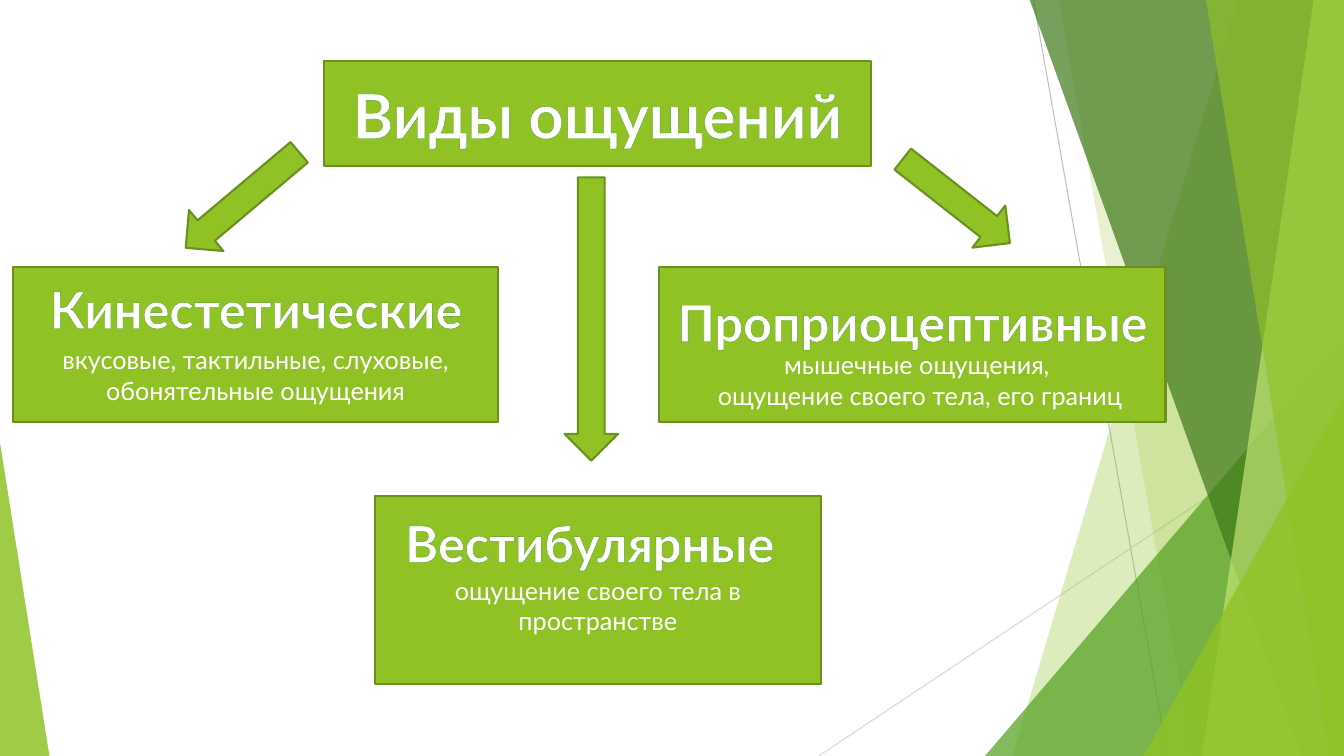
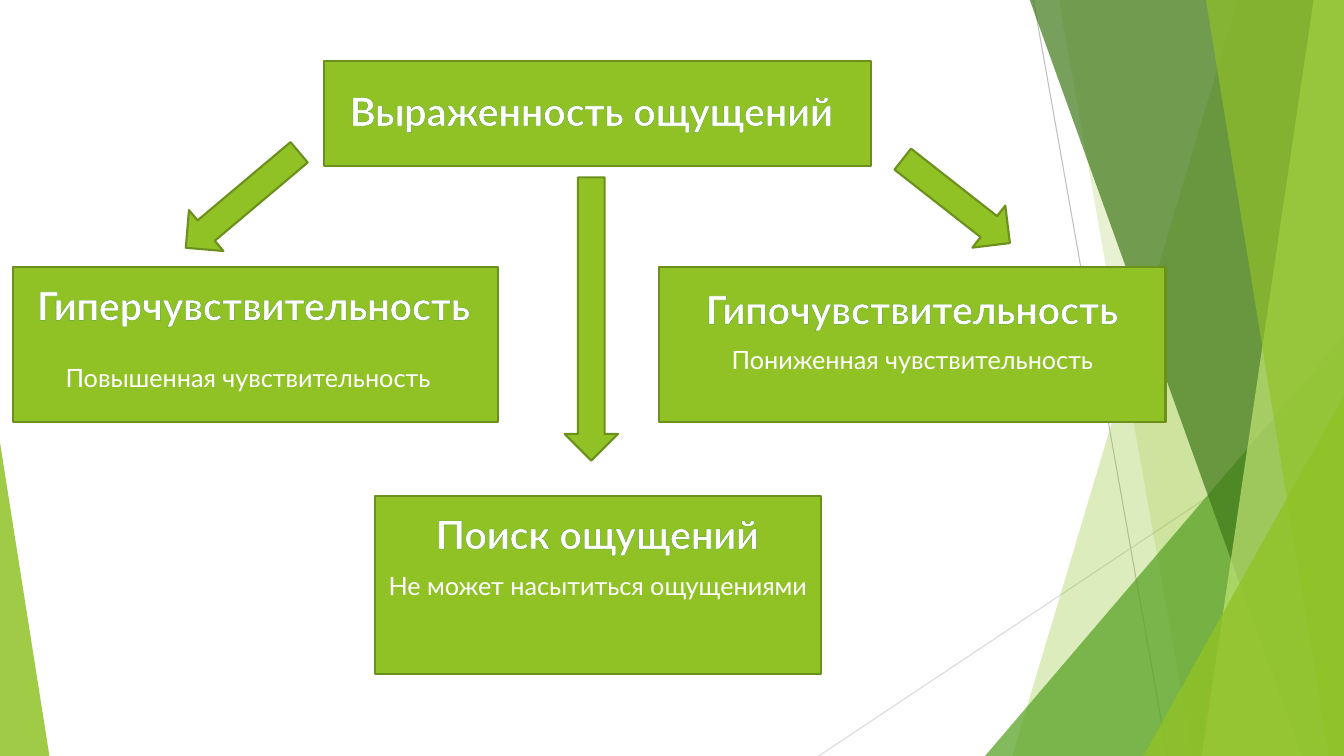
import pptx
import pptx.util
import pptx.dml.color
import pptx.enum.shapes
import pptx.enum.text
import pptx.oxml
import pptx.oxml.ns
import lxml.etree

Inches = pptx.util.Inches
Pt = pptx.util.Pt
RGBColor = pptx.dml.color.RGBColor
SHAPE = pptx.enum.shapes.MSO_SHAPE
ALIGN = pptx.enum.text.PP_ALIGN
ANCHOR = pptx.enum.text.MSO_ANCHOR
AUTO_SIZE = pptx.enum.text.MSO_AUTO_SIZE
qn = pptx.oxml.ns.qn

WIDTH, HEIGHT = 13.33, 7.5
FONT = "Lato"
BODY_SIZE = 18
BODY_LINE = 0.3
INSET = 0.05
WHITE = RGBColor(0xFF, 0xFF, 0xFF)
LIME = RGBColor(0x90, 0xC2, 0x26)
OLIVE = RGBColor(0x6B, 0x90, 0x1C)
GREEN = RGBColor(0x54, 0xA0, 0x21)
FOREST = RGBColor(0x3F, 0x78, 0x19)
PALE_LIME = RGBColor(0xC0, 0xE4, 0x74)
GREY = RGBColor(0xBF, 0xBF, 0xBF)
LIGHT_GREY = RGBColor(0xD9, 0xD9, 0xD9)

THIN_LINES = [
    ((10.25, 0), (11.58, HEIGHT), GREY),
    ((WIDTH, 4.03), (8.12, HEIGHT), LIGHT_GREY),
]
# Bands run to the right edge; wedges stand on the bottom edge.
FACETS = [
    ("band", (12.28, 10.04), LIME, 30),
    ("band", (10.5, 11.83), LIME, 20),
    ("wedge", (9.77, 3.33, 3.56, 1), GREEN, 72),
    ("band", (10.21, 12.91), FOREST, 70),
    ("band", (13.03, 11.92), PALE_LIME, 70),
    ("band", (11.96, 13.18), LIME, 65),
    ("wedge", (11.34, 3.93, 1.99, 1), LIME, 80),
    ("wedge", (0, 4.39, 0.49, 0), LIME, 85),
]

TITLE_BOX = (3.21, 0.61, 5.43, 1.04)
LEFT_BOX = (0.13, 2.65, 4.81, 1.54)
RIGHT_BOX = (6.54, 2.65, 5.02, 1.54)
ARROWS = [
    ((5.6, 1.76, 0.53, 2.81), 0),
    ((9.22, 1.32, 0.53, 1.35), 308.1),
    ((2.14, 1.25, 0.53, 1.47), 49.9),
]

SLIDES = [
    {
        "title": ("Виды ощущений", 44, (3.36, 0.71, 5.14, 0.84)),
        "boxes": [
            (LEFT_BOX, "вкусовые, тактильные, слуховые, обонятельные ощущения", 2),
            (RIGHT_BOX, "", 0),
            ((3.72, 4.92, 4.42, 1.87), "ощущение своего тела в пространстве", 1),
        ],
        "headings": [
            ([("Кинестетические", 36)], (0.3, 2.71, 4.48, 0.71)),
            ([("Проприоцептивные", 36), (" ", 44)], (6.54, 2.73, 5.17, 0.84)),
            ([("Вестибулярные", 36), (" ", 44)], (3.82, 4.92, 4.21, 0.84)),
        ],
        "caption": (["мышечные ощущения, ", "ощущение своего тела, его границ"],
                    (6.98, 3.42, 4.29, 0.71)),
    },
    {
        "title": ("Выраженность ощущений", 28, (3.3, 0.81, 5.13, 0.57)),
        "boxes": [
            (LEFT_BOX, "", 0),
            (RIGHT_BOX, "Пониженная чувствительность", 1),
            ((3.72, 4.92, 4.42, 1.77), "Не может насытиться ощущениями", 0),
        ],
        "headings": [
            ([("Гиперчувствительность", 28)], (0.13, 2.74, 4.77, 0.57)),
            ([("Гипочувствительность", 28)], (6.78, 2.78, 4.53, 0.57)),
            ([("Поиск ощущений", 28)], (4.19, 5.01, 3.47, 0.57)),
        ],
        "caption": (["Повышенная чувствительность"], (0.55, 3.55, 3.82, 0.4)),
    },
]


def inches(values):
    return [Inches(value) for value in values]


def add_text(paragraph, text, size, heading=False):
    paragraph.alignment = ALIGN.CENTER
    run = paragraph.add_run()
    run.text = text
    run.font.name = FONT
    run.font.size = Pt(size)
    run.font.bold = heading
    run.font.color.rgb = WHITE
    if heading:
        outline = lxml.etree.Element(qn("a:ln"), w=str(Pt(0.52)))
        fill = lxml.etree.SubElement(outline, qn("a:solidFill"))
        lxml.etree.SubElement(fill, qn("a:srgbClr"), val=str(GREEN))
        run._r.get_or_add_rPr().insert(0, outline)


def add_box(slide, kind, place):
    shape = slide.shapes.add_shape(kind, *inches(place))
    shape.shadow.inherit = False
    shape.fill.solid()
    shape.fill.fore_color.rgb = LIME
    shape.line.color.rgb = OLIVE
    shape.line.width = Pt(1.5)
    return shape


def add_label(slide, place):
    frame = slide.shapes.add_textbox(*inches(place)).text_frame
    frame.word_wrap = False
    frame.auto_size = AUTO_SIZE.SHAPE_TO_FIT_TEXT
    return frame


def add_facet(slide, kind, geometry):
    if kind == "band":
        top_x, bottom_x = geometry
        builder = slide.shapes.build_freeform(Inches(top_x), Inches(-0.01))
        corners = [(WIDTH, -0.01), (WIDTH, HEIGHT), (bottom_x, HEIGHT)]
        builder.add_line_segments([inches(corner) for corner in corners], close=True)
        return builder.convert_to_shape()
    left, top, width, apex = geometry
    place = inches((left, top, width, HEIGHT - top))
    shape = slide.shapes.add_shape(SHAPE.ISOSCELES_TRIANGLE, *place)
    shape.adjustments[0] = apex
    return shape


def decorate_master(presentation, slide):
    master_tree = presentation.slide_master.shapes.element
    for start, end, color in THIN_LINES:
        line = slide.shapes.add_connector(
            pptx.enum.shapes.MSO_CONNECTOR.STRAIGHT, *inches(start + end))
        line.line.color.rgb = color
        line.line.width = Pt(0.75)
        lxml.etree.SubElement(line.element.spPr, qn("a:effectLst"))
        master_tree.append(line.element)
    for kind, geometry, color, opacity in FACETS:
        facet = add_facet(slide, kind, geometry)
        facet.shadow.inherit = False
        facet.line.fill.background()
        facet.fill.solid()
        facet.fill.fore_color.rgb = color
        color_element = facet.element.spPr.find(qn("a:solidFill"))[0]
        lxml.etree.SubElement(color_element, qn("a:alpha"), val=str(opacity * 1000))
        master_tree.append(facet.element)


def place_title(slide, text, size, place):
    add_box(slide, SHAPE.RECTANGLE, TITLE_BOX)
    title = slide.shapes.title
    title.left, title.top, title.width, title.height = inches(place)
    frame = title.text_frame
    frame.word_wrap = False
    frame.auto_size = AUTO_SIZE.NONE
    frame.vertical_anchor = ANCHOR.MIDDLE
    add_text(frame.paragraphs[0], text, size, heading=True)
    slide.shapes.element.append(title.element)


def fill_slide(slide, content):
    place_title(slide, *content["title"])
    for place, text, lines_above in content["boxes"]:
        frame = add_box(slide, SHAPE.RECTANGLE, place).text_frame
        if text:
            frame.word_wrap = True
            frame.vertical_anchor = ANCHOR.MIDDLE
            frame.margin_top = Inches(INSET + lines_above * BODY_LINE)
            add_text(frame.paragraphs[0], text, BODY_SIZE)
    for runs, place in content["headings"]:
        paragraph = add_label(slide, place).paragraphs[0]
        for text, size in runs:
            add_text(paragraph, text, size, heading=True)
    lines, place = content["caption"]
    frame = add_label(slide, place)
    for index, text in enumerate(lines):
        paragraph = frame.add_paragraph() if index else frame.paragraphs[0]
        add_text(paragraph, text, BODY_SIZE)
    for place, angle in ARROWS:
        add_box(slide, SHAPE.DOWN_ARROW, place).rotation = angle


def main():
    presentation = pptx.Presentation()
    presentation.slide_width = Inches(WIDTH)
    presentation.slide_height = Inches(HEIGHT)
    title_only = presentation.slide_layouts[5]
    for index, content in enumerate(SLIDES):
        slide = presentation.slides.add_slide(title_only)
        if index == 0:
            decorate_master(presentation, slide)
        fill_slide(slide, content)
    presentation.save("out.pptx")


if __name__ == "__main__":
    main()
